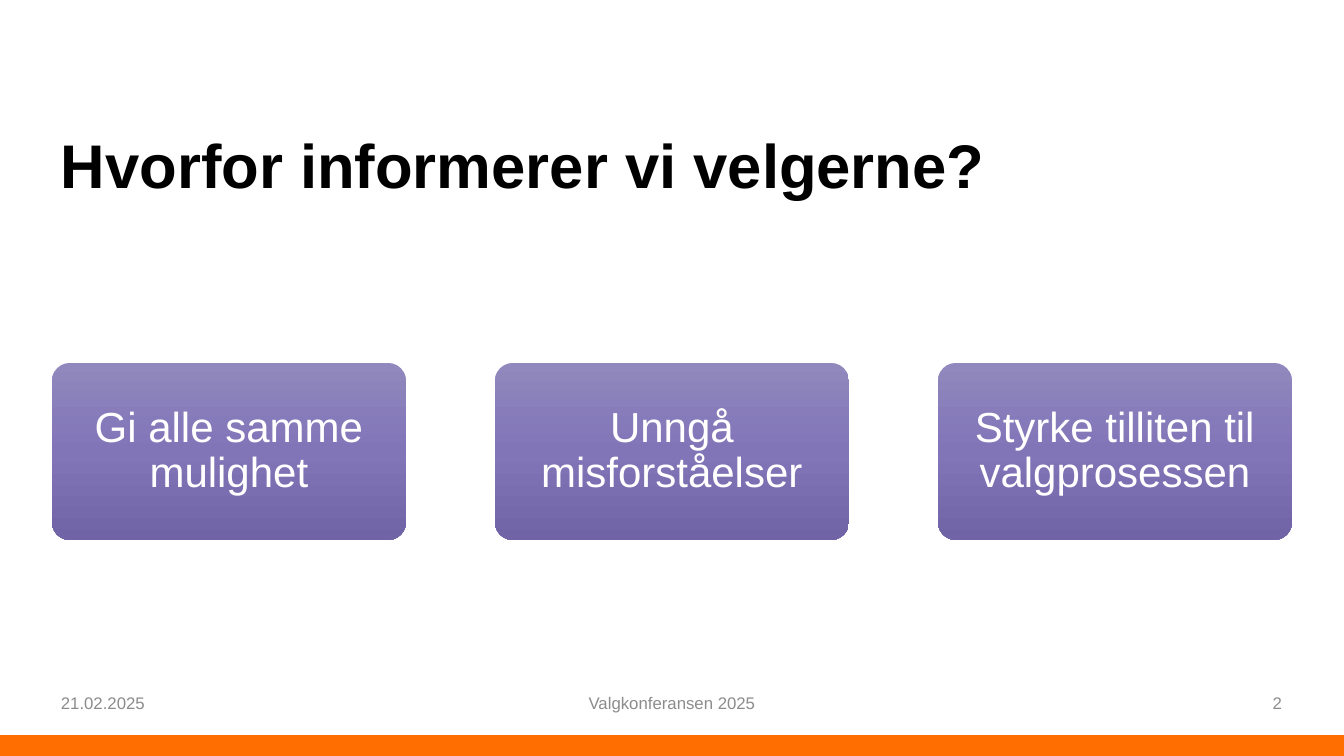
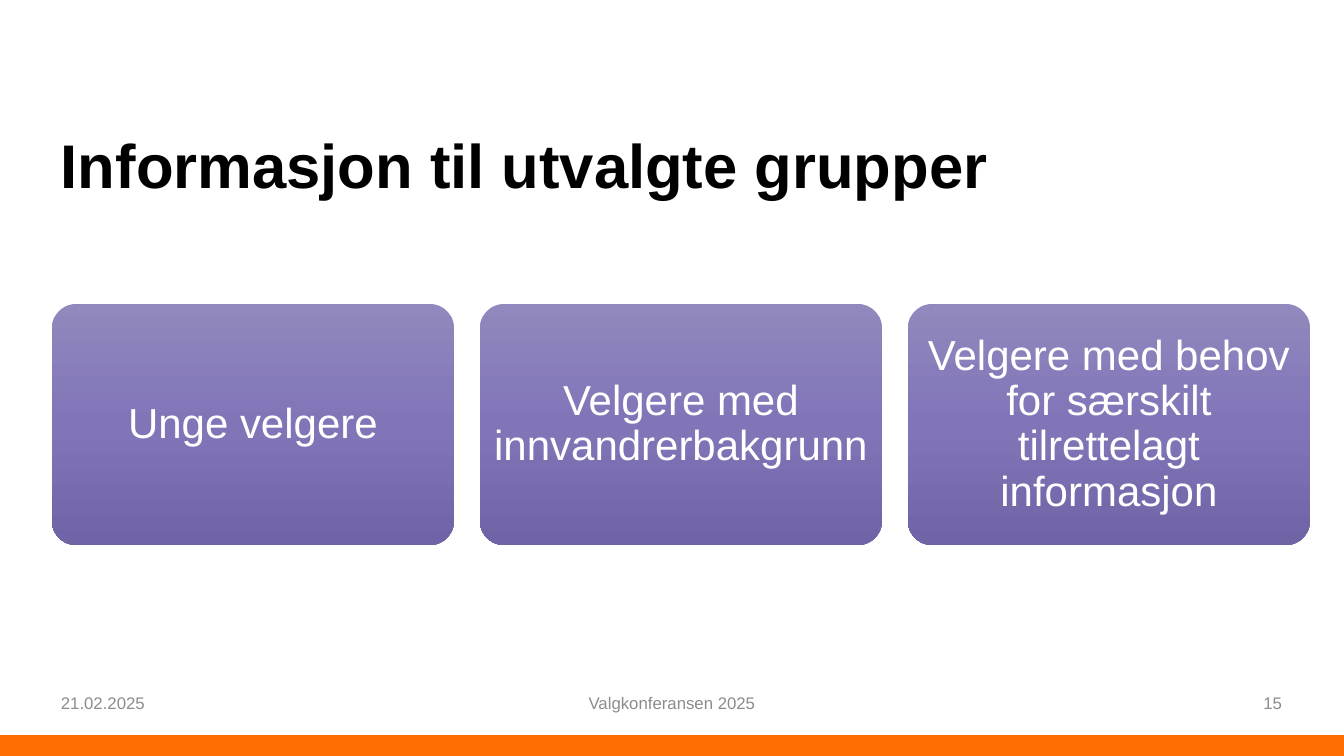
from copy import deepcopy
from dataclasses import dataclass

from pptx import Presentation
from pptx import util as u
from pptx.dml.color import RGBColor
from pptx.enum import shapes, text
from pptx.oxml.ns import qn

SCALE = 914400 / 100.8
WIDE, HIGH = 1344, 756
ALIGN = text.PP_ALIGN


def px(*nums):
    return [u.Emu(round(num * SCALE)) for num in nums]


@dataclass(frozen=True)
class Theme:
    face: str = "Arial"
    ink: str = "000000"
    grey: str = "8C8C8C"
    white: str = "FFFFFF"
    band: str = "FF6E00"
    fade: tuple = ("9188BD", "8175B8", "7064A7")
    title: int = 44
    card: int = 30
    foot: int = 12


class Deck:
    """Holds the theme and the current slide, and draws each kind of element."""

    def __init__(self, theme):
        self.theme = theme
        self.file = Presentation()
        self.file.slide_width, self.file.slide_height = px(WIDE, HIGH)

    def words(self, frame, words, size, hue, align, bold=False, lead=None):
        frame.word_wrap = True
        frame.vertical_anchor = text.MSO_ANCHOR.MIDDLE
        para = frame.paragraphs[0]
        para.text = words
        para.alignment = align
        para.line_spacing = lead
        font = para.font
        font.name, font.size, font.bold = self.theme.face, u.Pt(size), bold
        font.color.rgb = RGBColor.from_string(hue)

    def label(self, box, *style, **extra):
        frame = self.slide.shapes.add_textbox(*px(*box)).text_frame
        self.words(frame, *style, **extra)

    def shape(self, kind, box):
        item = self.slide.shapes.add_shape(kind, *px(*box))
        item.shadow.inherit = False
        item.line.fill.background()
        return item

    def page(self, title, num):
        look = self.theme
        self.slide = self.file.slides.add_slide(self.file.slide_layouts[6])
        band = self.shape(shapes.MSO_SHAPE.RECTANGLE, (0, 735, WIDE, 21))
        band.fill.solid()
        band.fill.fore_color.rgb = RGBColor.from_string(look.band)
        self.label((51, 96, 1241, 146), title, look.title, look.ink,
                   ALIGN.LEFT, bold=True, lead=0.9)
        for left, width, words, align in (
            (51, 302, "21.02.2025", ALIGN.LEFT),
            (445, 454, "Valgkonferansen 2025", ALIGN.CENTER),
            (990, 302, str(num), ALIGN.RIGHT),
        ):
            self.label((left, 683, width, 40), words, look.foot, look.grey, align)

    def card(self, box, words):
        look = self.theme
        item = self.shape(shapes.MSO_SHAPE.ROUNDED_RECTANGLE, box)
        item.adjustments[0] = 0.1
        item.fill.gradient()
        item.fill.gradient_angle = 270
        stops = item._element.spPr.find(qn("a:gradFill")).find(qn("a:gsLst"))
        stops.insert(1, deepcopy(stops[0]))
        for step, (stop, hue) in enumerate(zip(item.fill.gradient_stops, look.fade)):
            stop.position = step / 2
            stop.color.rgb = RGBColor.from_string(hue)
        frame = item.text_frame
        frame.margin_left = frame.margin_right = px(5)[0]
        frame.margin_top = frame.margin_bottom = px(4)[0]
        self.words(frame, words, look.card, look.white, ALIGN.CENTER, lead=0.9)

    def row(self, top, width, height, gap, names):
        for spot, words in enumerate(names):
            self.card((52 + spot * (width + gap), top, width, height), words)


def main():
    deck = Deck(Theme())
    deck.page("Hvorfor informerer vi velgerne?", 2)
    deck.row(363, 354, 177, 89, (
        "Gi alle samme mulighet",
        "Unngå misforståelser",
        "Styrke tilliten til valgprosessen",
    ))
    deck.page("Informasjon til utvalgte grupper", 15)
    deck.row(304, 402, 241, 26, (
        "Unge velgere",
        "Velgere med innvandrerbakgrunn",
        "Velgere med behov for særskilt tilrettelagt informasjon",
    ))
    deck.file.save("out.pptx")


if __name__ == "__main__":
    main()
